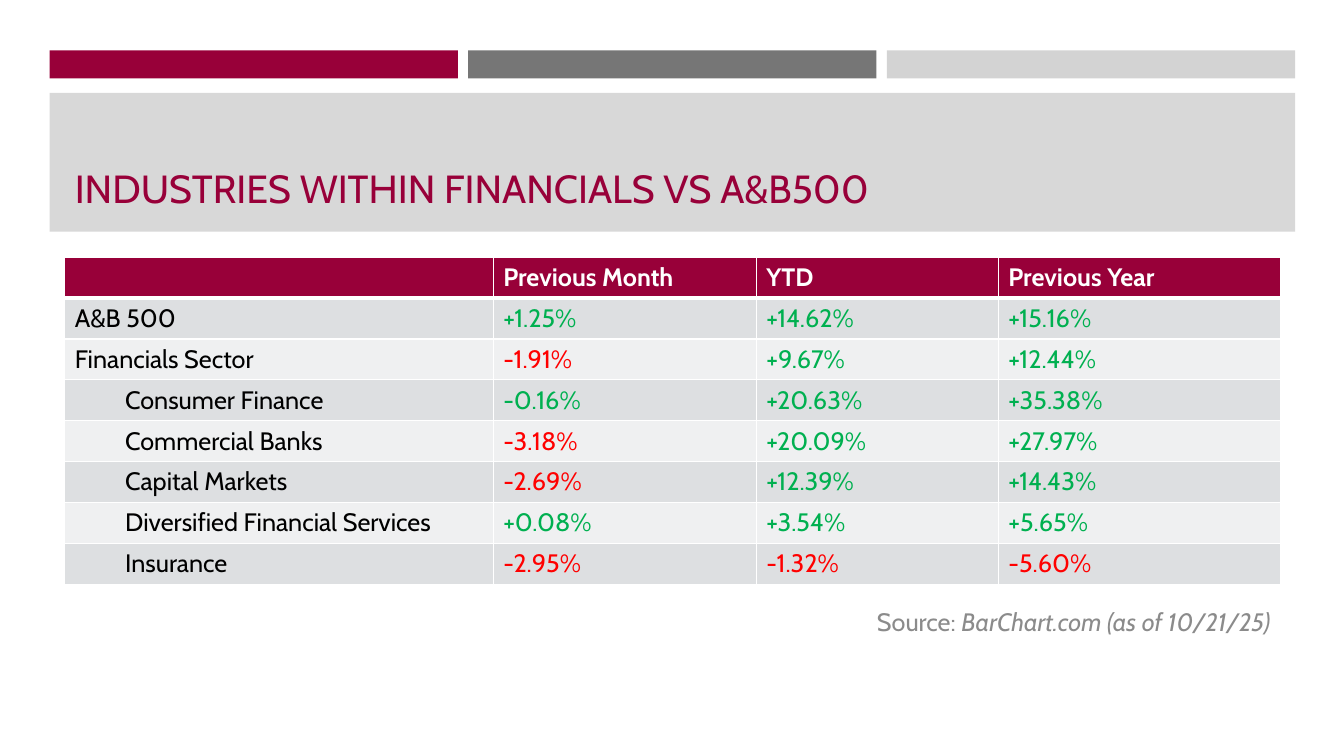
from dataclasses import dataclass

from lxml.etree import SubElement
from pptx import Presentation
from pptx.dml.color import RGBColor
from pptx.enum.shapes import MSO_SHAPE
from pptx.enum.text import MSO_ANCHOR, MSO_AUTO_SIZE, PP_ALIGN
from pptx.oxml.ns import qn
from pptx.slide import Slide
from pptx.table import _Cell
from pptx.text.text import _Paragraph
from pptx.util import Cm, Pt

FONT = "Cabin"
CRIMSON = RGBColor(0x98, 0x00, 0x39)
DARK_GRAY = RGBColor(0x76, 0x76, 0x76)
LIGHT_GRAY = RGBColor(0xD3, 0xD3, 0xD3)
BAND_GRAY = RGBColor(0xD8, 0xD8, 0xD8)
SOURCE_GRAY = RGBColor(0x8B, 0x8B, 0x8B)
ROW_DARK = RGBColor(0xDD, 0xDF, 0xE1)
ROW_LIGHT = RGBColor(0xEF, 0xF0, 0xF1)
WHITE = RGBColor(0xFF, 0xFF, 0xFF)
BLACK = RGBColor(0x00, 0x00, 0x00)
GREEN = RGBColor(0x00, 0xB0, 0x50)
RED = RGBColor(0xFF, 0x00, 0x00)

MARGIN = 1.25
BAR_PITCH = 10.55
CONTENT_LEFT = 1.63
CONTENT_WIDTH = 30.64
ROW_HEIGHT = 1.03
COLUMN_WIDTHS = (10.8, 6.63, 6.1, 7.11)
HEADERS = ("", "Previous Month", "YTD", "Previous Year")


@dataclass(frozen=True)
class Block:
    left: float
    top: float
    width: float
    height: float
    color: RGBColor


@dataclass(frozen=True)
class Industry:
    name: str
    changes: tuple[str, str, str]
    red_count: int = 0
    nested: bool = True


BLOCKS = [
    Block(MARGIN + index * BAR_PITCH, 1.27, 10.29, 0.71, color)
    for index, color in enumerate((CRIMSON, DARK_GRAY, LIGHT_GRAY))
] + [Block(MARGIN, 2.34, 31.39, 3.5, BAND_GRAY)]

INDUSTRIES = (
    Industry("A&B 500", ("+1.25%", "+14.62%", "+15.16%"), nested=False),
    Industry("Financials Sector", ("-1.91%", "+9.67%", "+12.44%"), 1, nested=False),
    Industry("Consumer Finance", ("-0.16%", "+20.63%", "+35.38%")),
    Industry("Commercial Banks", ("-3.18%", "+20.09%", "+27.97%"), 1),
    Industry("Capital Markets", ("-2.69%", "+12.39%", "+14.43%"), 1),
    Industry("Diversified Financial Services", ("+0.08%", "+3.54%", "+5.65%")),
    Industry("Insurance", ("-2.95%", "-1.32%", "-5.60%"), 3),
)


def add_text(paragraph: _Paragraph, text: str, *, color: RGBColor, size: float = 18,
             bold: bool = False, italic: bool = False,
             align: PP_ALIGN = PP_ALIGN.LEFT) -> None:
    paragraph.alignment = align
    run = paragraph.add_run()
    run.text = text
    run.font.name = FONT
    run.font.size = Pt(size)
    run.font.bold = bold
    run.font.italic = italic
    run.font.color.rgb = color


def add_block(slide: Slide, block: Block) -> None:
    shape = slide.shapes.add_shape(
        MSO_SHAPE.RECTANGLE, Cm(block.left), Cm(block.top), Cm(block.width), Cm(block.height))
    shape.shadow.inherit = False
    shape.fill.solid()
    shape.fill.fore_color.rgb = block.color
    shape.line.fill.background()


def format_cell(cell: _Cell, fill: RGBColor, top: float = 1, bottom: float = 1) -> None:
    properties = cell._tc.get_or_add_tcPr()
    for side, width in (("L", 1), ("R", 1), ("T", top), ("B", bottom)):
        border = SubElement(properties, qn(f"a:ln{side}"), w=str(Pt(width)))
        border_fill = SubElement(border, qn("a:solidFill"))
        SubElement(border_fill, qn("a:srgbClr"), val=str(WHITE))
    cell.fill.solid()
    cell.fill.fore_color.rgb = fill


def add_title(slide: Slide) -> None:
    title = slide.shapes.title
    title.left, title.top = Cm(CONTENT_LEFT), Cm(2.72)
    title.width, title.height = Cm(CONTENT_WIDTH), Cm(2.74)
    frame = title.text_frame
    frame.word_wrap = True
    frame.auto_size = MSO_AUTO_SIZE.NONE
    frame.vertical_anchor = MSO_ANCHOR.BOTTOM
    add_text(frame.paragraphs[0], "INDUSTRIES WITHIN FINANCIALS VS A&B500",
             color=CRIMSON, size=28)
    title.element.getparent().append(title.element)


def add_performance_table(slide: Slide) -> None:
    row_count = len(INDUSTRIES) + 1
    table = slide.shapes.add_table(
        row_count, len(HEADERS), Cm(CONTENT_LEFT), Cm(6.48),
        Cm(CONTENT_WIDTH), Cm(ROW_HEIGHT * row_count)).table
    for column, width in zip(table.columns, COLUMN_WIDTHS):
        column.width = Cm(width)
    for row in table.rows:
        row.height = Cm(ROW_HEIGHT)

    for column, header in enumerate(HEADERS):
        cell = table.cell(0, column)
        format_cell(cell, CRIMSON, bottom=3)
        add_text(cell.text_frame.paragraphs[0], header, color=WHITE, bold=True)

    for row, industry in enumerate(INDUSTRIES, start=1):
        for column, text in enumerate((industry.name, *industry.changes)):
            cell = table.cell(row, column)
            format_cell(cell, ROW_DARK if row % 2 else ROW_LIGHT, top=3 if row == 1 else 1)
            paragraph = cell.text_frame.paragraphs[0]
            if column == 0:
                color = BLACK
                if industry.nested:
                    paragraph.level = 1
                    paragraph._p.get_or_add_pPr().set("marL", str(Cm(1.27)))
            else:
                color = RED if column <= industry.red_count else GREEN
            add_text(paragraph, text, color=color)


def add_source(slide: Slide) -> None:
    frame = slide.shapes.add_textbox(Cm(20.02), Cm(15.16), Cm(12.25), Cm(1.03)).text_frame
    frame.word_wrap = True
    frame.auto_size = MSO_AUTO_SIZE.SHAPE_TO_FIT_TEXT
    paragraph = frame.paragraphs[0]
    add_text(paragraph, "Source: ", color=SOURCE_GRAY, align=PP_ALIGN.RIGHT)
    add_text(paragraph, "BarChart.com (as of 10/21/25)", color=SOURCE_GRAY,
             italic=True, align=PP_ALIGN.RIGHT)


def main() -> None:
    presentation = Presentation()
    presentation.slide_width, presentation.slide_height = Cm(33.87), Cm(19.05)
    slide = presentation.slides.add_slide(presentation.slide_layouts[5])
    for block in BLOCKS:
        add_block(slide, block)
    add_performance_table(slide)
    add_title(slide)
    add_source(slide)
    presentation.save("out.pptx")


if __name__ == "__main__":
    main()
